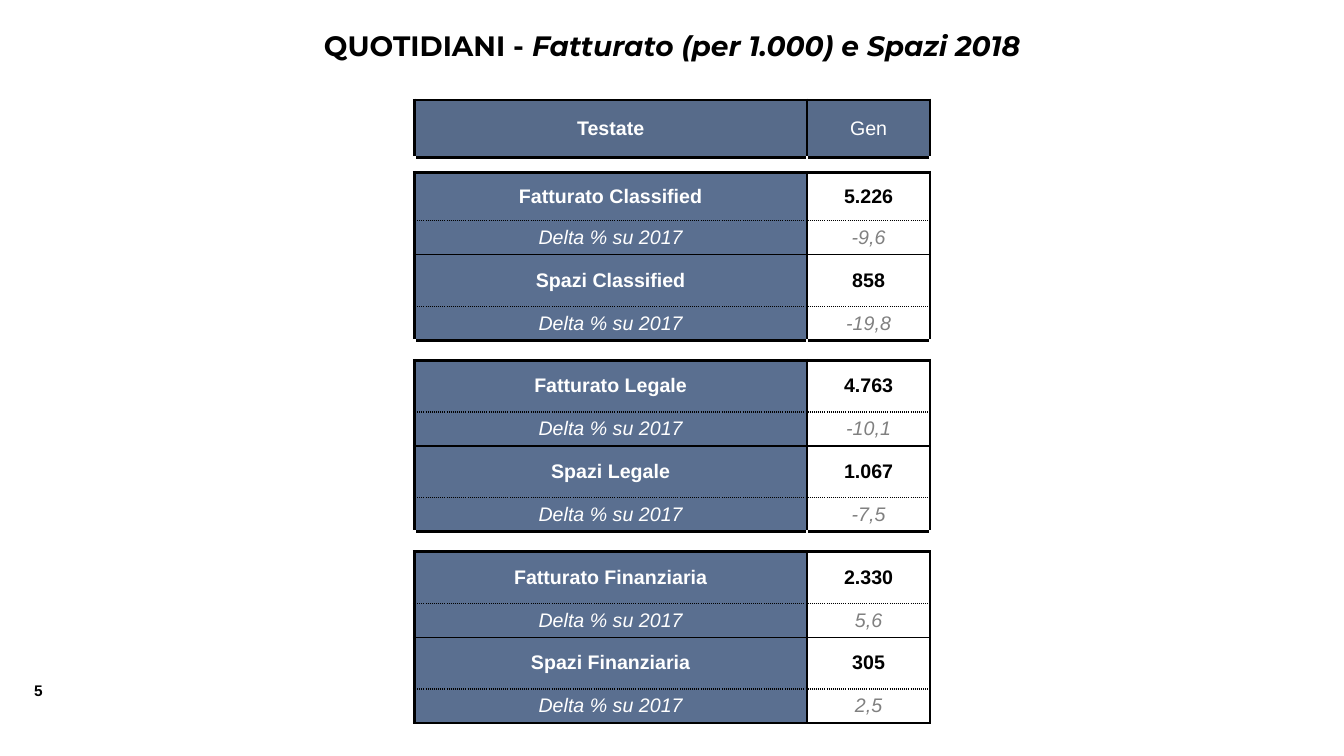
from lxml import etree
from pptx import Presentation
from pptx.dml.color import RGBColor
from pptx.enum import text as tx
from pptx.oxml import ns
from pptx.util import Cm, Pt

HEX = {"black": "000000", "white": "FFFFFF", "grey": "808080",
       "head": "576B8A", "blue": "5A6F90"}
THICK = ("black", 2.25, "solid")
BLANK = ("white", 2.25, "solid")
THIN = ("black", 1, "solid")
DOTS = ("black", 1, "sysDot")

DELTA = "Delta % su 2017"
GROUPS = [
    ("Classified", "5.226", "-9,6", "858", "-19,8"),
    ("Legale", "4.763", "-10,1", "1.067", "-7,5"),
    ("Finanziaria", "2.330", "5,6", "305", "2,5"),
]
HEAD_H, MAIN_H, DELTA_H = 1.44, 1.3, 0.86
GAPS = [0.38, 0.5, 0.5]
FIRST_H = [1.22, MAIN_H, MAIN_H]


def put(obj, **vals):
    for name, val in vals.items():
        setattr(obj, name, val)


def add_run(para, words, color, size, face="Arial", **vals):
    run = para.add_run()
    run.text = words
    put(run.font, size=Pt(size), name=face, **vals)
    run.font.color.rgb = RGBColor.from_string(HEX[color])


def set_edges(cell, left, right, top, low):
    props = cell._tc.get_or_add_tcPr()
    for side, (color, width, dash) in zip("LRTB", (left, right, top, low)):
        line = etree.SubElement(props, ns.qn("a:ln" + side), w=str(Pt(width)))
        fill = etree.SubElement(line, ns.qn("a:solidFill"))
        etree.SubElement(fill, ns.qn("a:srgbClr"), val=HEX[color])
        etree.SubElement(line, ns.qn("a:prstDash"), val=dash)


def set_fill(cell, color):
    if color:
        cell.fill.solid()
        cell.fill.fore_color.rgb = RGBColor.from_string(HEX[color])
    else:
        cell.fill.background()


def set_pad(cell, wide, high):
    put(cell, margin_left=Cm(wide), margin_right=Cm(wide),
        margin_top=Cm(high), margin_bottom=Cm(high))


def fill_cell(cell, words, color, fill, top, low, pad=True, **vals):
    set_edges(cell, THICK, THICK, top, low)
    set_fill(cell, fill)
    set_pad(cell, *((0.25, 0.13) if pad else (0, 0)))
    cell.vertical_anchor = tx.MSO_ANCHOR.MIDDLE
    para = cell.text_frame.paragraphs[0]
    para.alignment = tx.PP_ALIGN.CENTER
    add_run(para, words, color, 14, **vals)


def fill_gap(cell):
    set_edges(cell, BLANK, BLANK, THICK, THICK)
    set_fill(cell, "white")
    set_pad(cell, 0, 0)
    # A small end mark keeps the empty row from growing
    etree.SubElement(cell.text_frame.paragraphs[0]._p,
                     ns.qn("a:endParaRPr"), sz="600")


def fill_row(row, label, value, top, low, delta):
    look = {"bold": not delta, "italic": delta}
    fill_cell(row.cells[0], label, "white", "blue", top, low, **look)
    fill_cell(row.cells[1], value, "grey" if delta else "black", None,
              top, low, pad=False, **look)


def add_grid(slide):
    heights = [HEAD_H]
    for gap, first in zip(GAPS, FIRST_H):
        heights += [gap, first, DELTA_H, MAIN_H, DELTA_H]
    grid = slide.shapes.add_table(len(heights), 2, Cm(10.44), Cm(2.52),
                                  Cm(13), Cm(sum(heights))).table
    put(grid, first_row=False, horz_banding=False)
    for col, width in zip(grid.columns, (9.9, 3.1)):
        col.width = Cm(width)
    for row, high in zip(grid.rows, heights):
        row.height = Cm(high)

    rows = list(grid.rows)
    for cell, words, bold in zip(rows[0].cells, ("Testate", "Gen"), (True, False)):
        fill_cell(cell, words, "white", "head", THICK, THICK, bold=bold)
    for num, (name, sales, sales_d, space, space_d) in enumerate(GROUPS):
        gap, *body = rows[1 + 5 * num:6 + 5 * num]
        for cell in gap.cells:
            fill_gap(cell)
        fill_row(body[0], "Fatturato " + name, sales, THICK, DOTS, False)
        fill_row(body[1], DELTA, sales_d, DOTS, THIN, True)
        fill_row(body[2], "Spazi " + name, space, THIN, DOTS, False)
        fill_row(body[3], DELTA, space_d, DOTS, THICK, True)


def add_title(slide):
    title = slide.shapes.title
    put(title, left=Cm(4.24), top=Cm(0.58), width=Cm(25.4), height=Cm(1.12))
    put(title.text_frame, auto_size=tx.MSO_AUTO_SIZE.NONE, word_wrap=True,
        vertical_anchor=tx.MSO_ANCHOR.MIDDLE)
    para = title.text_frame.paragraphs[0]
    para.alignment = tx.PP_ALIGN.CENTER
    for words, slant in (("QUOTIDIANI - ", False),
                         ("Fatturato (per 1.000) e Spazi 2018", True)):
        add_run(para, words, "black", 20, "Montserrat", bold=True, italic=slant)


def add_number(slide):
    box = slide.shapes.add_textbox(Cm(0.61), Cm(17.04), Cm(1.07), Cm(0.74))
    box.text_frame.word_wrap = True
    add_run(box.text_frame.paragraphs[0], "5", "black", 11, bold=True)


def main():
    deck = Presentation()
    put(deck, slide_width=Cm(33.87), slide_height=Cm(19.05))
    slide = deck.slides.add_slide(deck.slide_layouts[5])
    add_number(slide)
    add_title(slide)
    add_grid(slide)
    deck.save("out.pptx")


if __name__ == "__main__":
    main()
